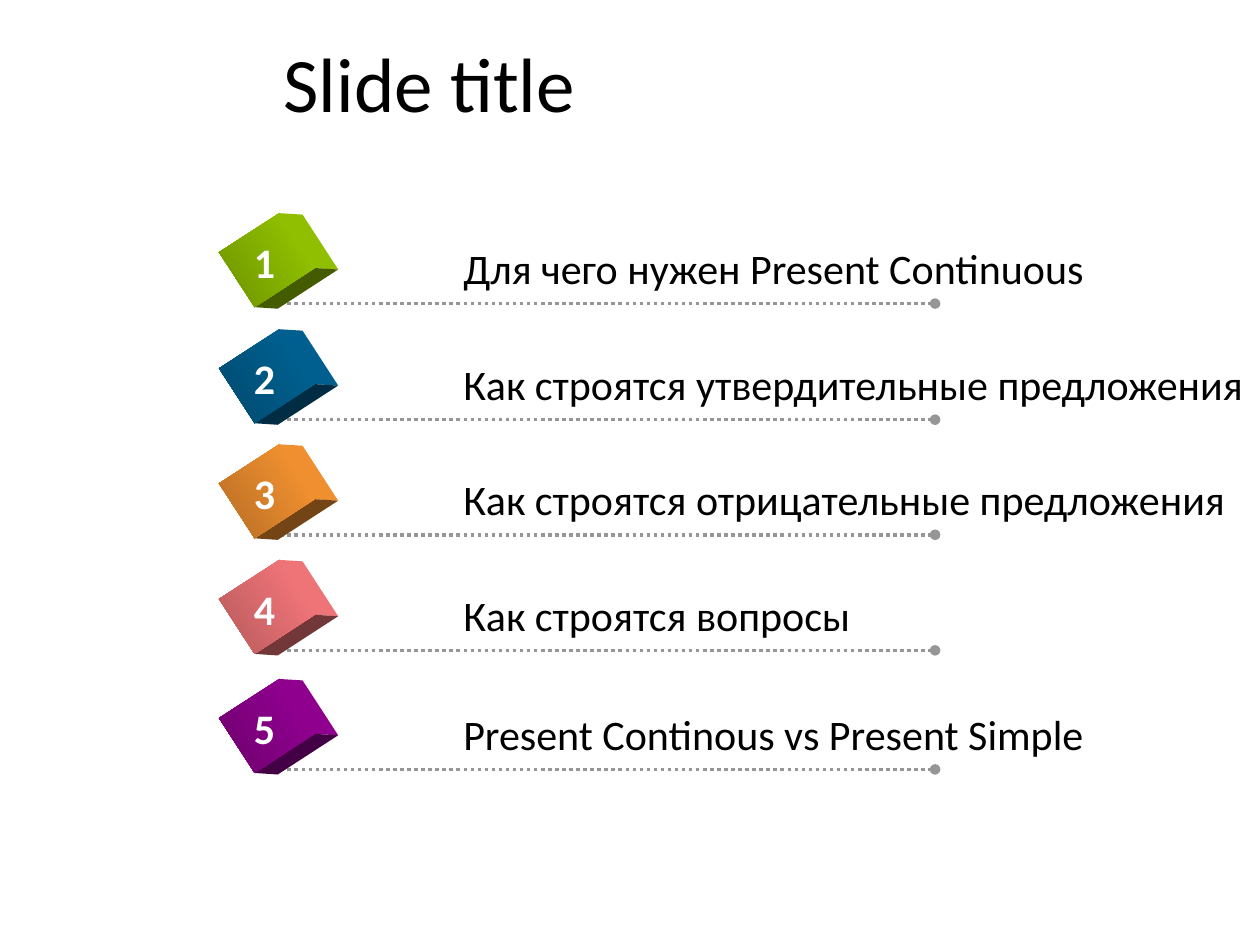
from dataclasses import dataclass
from math import cos, radians, sin

from lxml.etree import SubElement
from pptx import Presentation
from pptx.dml.color import RGBColor
from pptx.enum.dml import MSO_LINE
from pptx.enum.shapes import MSO_CONNECTOR, MSO_SHAPE
from pptx.enum.text import MSO_ANCHOR, MSO_AUTO_SIZE, PP_ALIGN
from pptx.oxml.ns import qn
from pptx.util import Cm, Pt


@dataclass(frozen=True)
class Theme:
    face: str = "Calibri"
    ink: str = "000000"
    white: str = "FFFFFF"
    rule: str = "969696"
    head: int = 44
    body: int = 24


THEME = Theme()
TURN = 57           # tilt of each cube, degrees
DEPTH = (0.47, 0.03)  # offset of the cube's back face, cm

# top (cm), label, label width (cm), front colour, shaded colour
ROWS = [
    (4.52, "Для чего нужен Present Continuous", 13.16, "99CC00", "6D9200"),
    (6.86, "Как строятся утвердительные предложения", 16.38, "006699", "00496D"),
    (9.18, "Как строятся отрицательные предложения", 16.03, "FF9933", "B66D24"),
    (11.51, "Как строятся вопросы", 8.38, "FF7C80", "B6595C"),
    (13.91, "Present Continous vs Present Simple", 13.13, "990099", "6D006D"),
]


def rgb(code):
    return RGBColor.from_string(code)


def shade(code, part):
    return RGBColor(*(int(value * part) for value in rgb(code)))


def style(item, form):
    for name, value in form.items():
        setattr(item, name, value)


def write(shape, text, size, color, bold=False):
    part = shape.text_frame.paragraphs[0]
    part.alignment = PP_ALIGN.LEFT
    run = part.add_run()
    run.text = text
    style(run.font, {"name": THEME.face, "size": Pt(size), "bold": bold})
    run.font.color.rgb = rgb(color)
    return part


def label(shapes, box, text, color, bold=False):
    shape = shapes.add_textbox(*map(Cm, box))
    style(shape.text_frame, {"word_wrap": False,
                             "auto_size": MSO_AUTO_SIZE.SHAPE_TO_FIT_TEXT})
    write(shape, text, THEME.body, color, bold)


def title(slide, box):
    shape = slide.shapes.title
    style(shape, dict(zip(("left", "top", "width", "height"), map(Cm, box))))
    shape.text_frame.vertical_anchor = MSO_ANCHOR.MIDDLE
    write(shape, "Slide title", THEME.head, THEME.ink).line_spacing = 0.9


def rule(shapes, left, right, y):
    line = shapes.add_connector(MSO_CONNECTOR.STRAIGHT,
                                Cm(left), Cm(y), Cm(right), Cm(y))
    style(line.line, {"width": Pt(2), "dash_style": MSO_LINE.ROUND_DOT})
    line.line.color.rgb = rgb(THEME.rule)
    props = line._element.spPr
    SubElement(props.find(qn("a:ln")), qn("a:tailEnd"), type="oval")
    SubElement(props, qn("a:effectLst"))


def cube(shapes, box, light, dark):
    left, top, wide, high = box
    mid_x, mid_y = left + wide / 2, top + high / 2
    co, si = cos(radians(TURN)), sin(radians(TURN))

    def edge(sx, sy, back=0):
        dx, dy = sx * wide / 2, sy * high / 2
        return (Cm(mid_x + dx * co - dy * si + back * DEPTH[0]),
                Cm(mid_y + dx * si + dy * co + back * DEPTH[1]))

    # Bright upper side, then dark lower side
    for first, last, part in (((-1, -1), (1, -1), 0.94), ((1, -1), (1, 1), 0.45)):
        path = shapes.build_freeform(*edge(*first))
        path.add_line_segments([edge(*first, 1), edge(*last, 1), edge(*last)])
        side = path.convert_to_shape()
        side.shadow.inherit = False
        side.fill.solid()
        side.fill.fore_color.rgb = shade(light, part)
        side.line.fill.background()

    # Front face
    front = shapes.add_shape(MSO_SHAPE.RECTANGLE, *map(Cm, box))
    front.rotation = TURN
    front.shadow.inherit = False
    front.line.fill.background()
    front.fill.gradient()
    front.fill.gradient_angle = 270
    for stop, color, place in zip(front.fill.gradient_stops, (light, dark), (0, 1)):
        stop.position = place
        stop.color.rgb = rgb(color)


def row(slide, box, number, text, span, light, dark):
    left, top, wide = box
    shapes = slide.shapes.add_group_shape().shapes
    rule(shapes, left + 0.79, left + wide, top + 1.6)
    cube(shapes, (left, top, 1.32, 1.45), light, dark)
    label(shapes, (left + 4.37, top + 0.24, span, 1.3), text, THEME.ink)
    label(shapes, (left + 0.15, top + 0.12, 0.99, 1.27), str(number),
          THEME.white, True)


def main():
    deck = Presentation()
    style(deck, {"slide_width": Cm(25.4), "slide_height": Cm(19.05)})
    slide = deck.slides.add_slide(deck.slide_layouts[5])
    title(slide, (5.46, 0.66, 18.39, 2.21))
    for number, (top, *rest) in enumerate(ROWS, 1):
        row(slide, (4.72, top, 14.13), number, *rest)
    deck.save("out.pptx")


if __name__ == "__main__":
    main()
